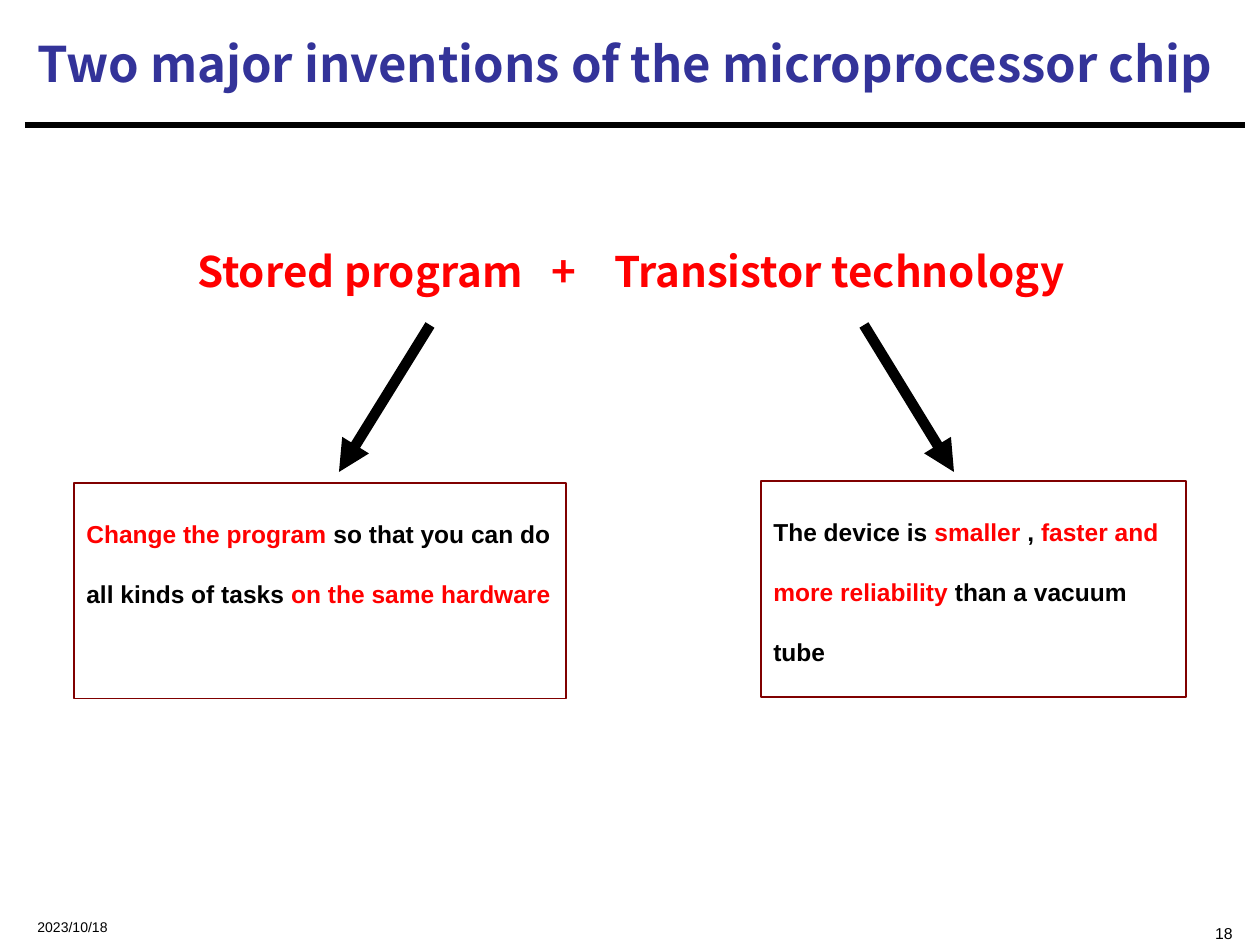
from lxml.etree import SubElement
from pptx import Presentation
from pptx.dml.color import RGBColor
from pptx.enum.shapes import MSO_CONNECTOR as Connector, MSO_SHAPE as Shape
from pptx.enum.text import MSO_ANCHOR as Anchor, PP_ALIGN as Align
from pptx.oxml.ns import qn
from pptx.util import Pt

PX = 914400 // 126
BLACK = RGBColor(0, 0, 0)
RED = RGBColor(255, 0, 0)
BLUE = RGBColor(0x33, 0x33, 0x99)
MAROON = RGBColor(0x80, 0, 0)
HEADING_FONT = "Noto Sans CJK SC"
BODY_FONT = "Arial"

TITLE = [("Two major inventions of the microprocessor chip", BLUE)]
INVENTIONS = [("Stored program   +    Transistor technology", RED)]
DATE = [("2023/10/18", BLACK)]
PAGE_NUMBER = [("18", BLACK)]
EXPLANATIONS = [
    ((74, 483, 492, 216), [
        ("Change the program ", RED),
        ("so that you can do all kinds of tasks ", BLACK),
        ("on the same hardware", RED),
    ]),
    ((761, 481, 425, 216), [
        ("The device is ", BLACK),
        ("smaller", RED),
        (" , ", BLACK),
        ("faster and more reliability", RED),
        (" than a vacuum tube", BLACK),
    ]),
]
RULE = (25, 125, 1245, 125)
ARROWS = [(430, 325, 339, 472), (864, 325, 954, 472)]


def scaled(lengths):
    return [length * PX for length in lengths]


def add_text(slide, box, runs, size, font=BODY_FONT, bold=True, align=Align.LEFT,
             anchor=Anchor.TOP, top=6, spacing=1.0, outline=None):
    if outline is None:
        shape = slide.shapes.add_textbox(*scaled(box))
    else:
        shape = slide.shapes.add_shape(Shape.RECTANGLE, *scaled(box))
        shape.shadow.inherit = False
        shape.fill.background()
        shape.line.color.rgb = outline
        shape.line.width = Pt(0.75)
    frame = shape.text_frame
    frame.word_wrap = True
    frame.vertical_anchor = anchor
    frame.margin_top = top * PX
    paragraph = frame.paragraphs[0]
    paragraph.alignment = align
    paragraph.line_spacing = spacing
    for text, color in runs:
        run = paragraph.add_run()
        run.text = text
        run.font.size = Pt(size)
        run.font.name = font
        run.font.bold = bold
        run.font.color.rgb = color
        if font == HEADING_FONT:
            SubElement(run.font._element, qn("a:ea"), typeface=font)


def add_line(slide, ends, width, arrow=False):
    line = slide.shapes.add_connector(Connector.STRAIGHT, *scaled(ends))
    line.line.color.rgb = BLACK
    line.line.width = Pt(width)
    properties = line._element.spPr
    if arrow:
        SubElement(properties.find(qn("a:ln")), qn("a:tailEnd"), type="triangle")
    SubElement(properties, qn("a:effectLst"))


def main():
    presentation = Presentation()
    presentation.slide_width, presentation.slide_height = scaled((1260, 945))
    slide = presentation.slides.add_slide(presentation.slide_layouts[6])

    add_line(slide, RULE, 3.75)
    add_text(slide, (155, 246, 951, 111), INVENTIONS, 24, font=HEADING_FONT,
             align=Align.CENTER, top=0)
    for box, runs in EXPLANATIONS:
        add_text(slide, box, runs, 14, spacing=2.04, outline=MAROON)
    add_text(slide, (25, 10, 1218, 106), TITLE, 28, font=HEADING_FONT,
             anchor=Anchor.MIDDLE)
    for ends in ARROWS:
        add_line(slide, ends, 6, arrow=True)
    add_text(slide, (25, 901, 315, 34), DATE, 8, bold=False, top=18)
    add_text(slide, (867, 901, 378, 34), PAGE_NUMBER, 9, bold=False,
             align=Align.RIGHT, top=23)
    presentation.save("out.pptx")


if __name__ == "__main__":
    main()
